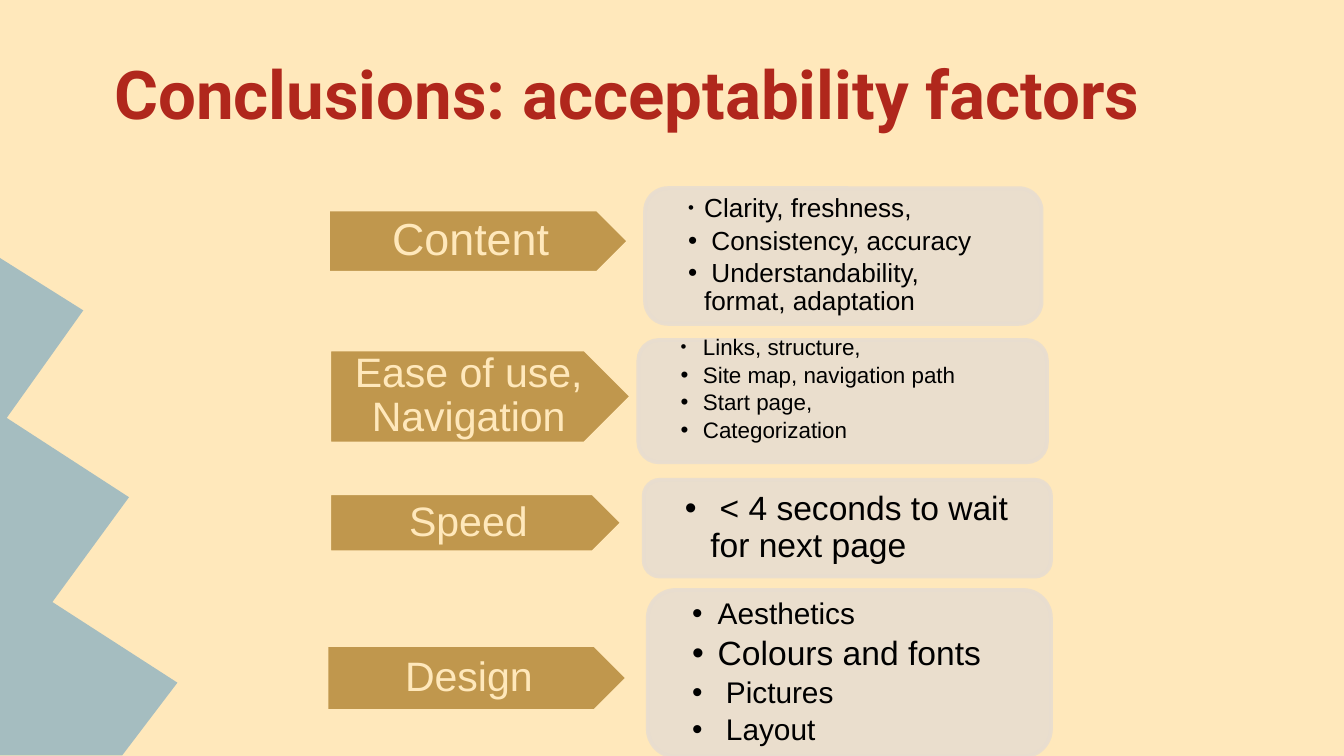
from lxml import etree
from pptx import Presentation
from pptx.dml.color import RGBColor
from pptx.enum.shapes import MSO_SHAPE
from pptx.enum.text import MSO_ANCHOR, MSO_AUTO_SIZE, PP_ALIGN
from pptx.oxml.ns import qn
from pptx.util import Inches, Pt

ARROW, PANEL = MSO_SHAPE.PENTAGON, MSO_SHAPE.ROUNDED_RECTANGLE
MIDDLE, BOTTOM = MSO_ANCHOR.MIDDLE, MSO_ANCHOR.BOTTOM
LEFT, CENTER = PP_ALIGN.LEFT, PP_ALIGN.CENTER
NO_FIT = MSO_AUTO_SIZE.NONE


def color(hex_string):
    return RGBColor.from_string(hex_string)


def write(para, text, size, font="Arial", ink="000000", bold=False,
          align=LEFT, spacing=0.9, after=0):
    """Put one formatted run into a paragraph."""
    para.alignment = align
    para.line_spacing = spacing
    para.space_before, para.space_after = Pt(0), Pt(after)
    span = para.add_run()
    span.text = text
    span.font.name, span.font.size, span.font.bold = font, Pt(size), bold
    span.font.color.rgb = color(ink)


def add_bullet(para, hanging, percent):
    """Give a paragraph a hanging bullet."""
    properties = para._p.get_or_add_pPr()
    properties.set("marL", str(Inches(hanging)))
    properties.set("indent", str(-Inches(hanging)))
    bullet_size = etree.SubElement(properties, qn("a:buSzPct"))
    bullet_size.set("val", str(percent * 1000))
    etree.SubElement(properties, qn("a:buFont")).set("typeface", "Arial")
    etree.SubElement(properties, qn("a:buChar")).set("char", "•")


def set_alpha(fill_parent, percent):
    for tint in fill_parent.iter(qn("a:srgbClr")):
        etree.SubElement(tint, qn("a:alpha")).set("val", str(percent * 1000))


class FactorSlide:
    cream, red, gold = "FFE8BB", "B0271C", "C0974D"
    sand, blue = "E8DDD0", "A5BDC0"

    def __init__(self, page):
        self.page = page
        page.background.fill.solid()
        page.background.fill.fore_color.rgb = color(self.cream)

    def frame(self, shape, margins, anchor=MIDDLE):
        frame = shape.text_frame
        frame.word_wrap, frame.auto_size = True, NO_FIT
        frame.vertical_anchor = anchor
        (frame.margin_left, frame.margin_top, frame.margin_right,
         frame.margin_bottom) = [Inches(margin) for margin in margins]
        return frame

    def box(self, kind, place, fill, line):
        box = self.page.shapes.add_shape(kind, *[Inches(n) for n in place])
        box.shadow.inherit = False
        box.fill.solid()
        box.fill.fore_color.rgb = color(fill)
        box.line.color.rgb = color(line)
        box.line.width = Pt(2)
        return box

    def zigzag(self, points):
        start, *others = [(Inches(x), Inches(y)) for x, y in points]
        builder = self.page.shapes.build_freeform(*start)
        builder.add_line_segments(others, close=True)
        shape = builder.convert_to_shape()
        shape.shadow.inherit = False
        shape.fill.solid()
        shape.fill.fore_color.rgb = color(self.blue)
        shape.line.fill.background()

    def title(self, text, place):
        title = self.page.shapes.title
        title.left, title.top, title.width, title.height = [Inches(n) for n in place]
        frame = self.frame(title, [0.1] * 4, BOTTOM)
        write(frame.paragraphs[0], text, 36, font="Roboto", ink=self.red,
              bold=True, spacing=1)

    def arrow(self, place, text, size):
        arrow = self.box(ARROW, place, self.gold, self.cream)
        frame = self.frame(arrow, (0.09, 0.05, 0.09, 0.05))
        write(frame.paragraphs[0], text, size, ink=self.cream, align=CENTER)

    def panel(self, place, items, hanging, first_bullet=100, bottom=0.14):
        panel = self.box(PANEL, place, self.sand, self.sand)
        set_alpha(panel._element.spPr, 90)
        frame = self.frame(panel, (0.27, 0.14, 0.27, bottom))
        for index, (text, size) in enumerate(items):
            para = frame.add_paragraph() if index else frame.paragraphs[0]
            write(para, text, size, after=round(size * 0.16, 1))
            add_bullet(para, hanging, 100 if index else first_bullet)


# Page in 16:9
deck = Presentation()
deck.slide_width = Inches(10)
deck.slide_height = deck.slide_width * 9 // 16
slide = FactorSlide(deck.slides.add_slide(deck.slide_layouts[5]))

# Decoration and title
slide.zigzag([(0, 1.92), (0, 5.62), (0.91, 5.62), (1.32, 5.08), (0.39, 4.48),
              (0.96, 3.7), (0.05, 3.11), (0.62, 2.31)])
slide.title("Conclusions: acceptability factors", (0.75, 0.23, 8.57, 0.86))

# Each factor: its panel of details, then its arrow
slide.panel((4.8, 1.4, 2.95, 1.01),
            [("Clarity, freshness,", 14), (" Consistency, accuracy", 14),
             (" Understandability, format, adaptation", 14)],
            hanging=0.12, first_bullet=64)
slide.arrow((2.44, 1.56, 2.24, 0.47), "Content", 24)

slide.panel((4.75, 2.53, 3.04, 0.91),
            [(" Links, structure,", 12), (" Site map, navigation path", 12),
             (" Start page,", 12), (" Categorization", 12)],
            hanging=0.12, first_bullet=75, bottom=0.31)
slide.arrow((2.45, 2.6, 2.25, 0.7), "Ease of use, Navigation", 22)

slide.panel((4.79, 3.57, 3.03, 0.72),
            [(" < 4 seconds to wait for next page", 18)], hanging=0.19)
slide.arrow((2.45, 3.67, 2.18, 0.44), "Speed", 22)

slide.panel((4.82, 4.39, 3, 1.24),
            [("Aesthetics", 16), ("Colours and fonts", 18),
             (" Pictures", 16), (" Layout", 16)], hanging=0.19)
slide.arrow((2.43, 4.8, 2.24, 0.49), "Design", 22)

deck.save("out.pptx")
